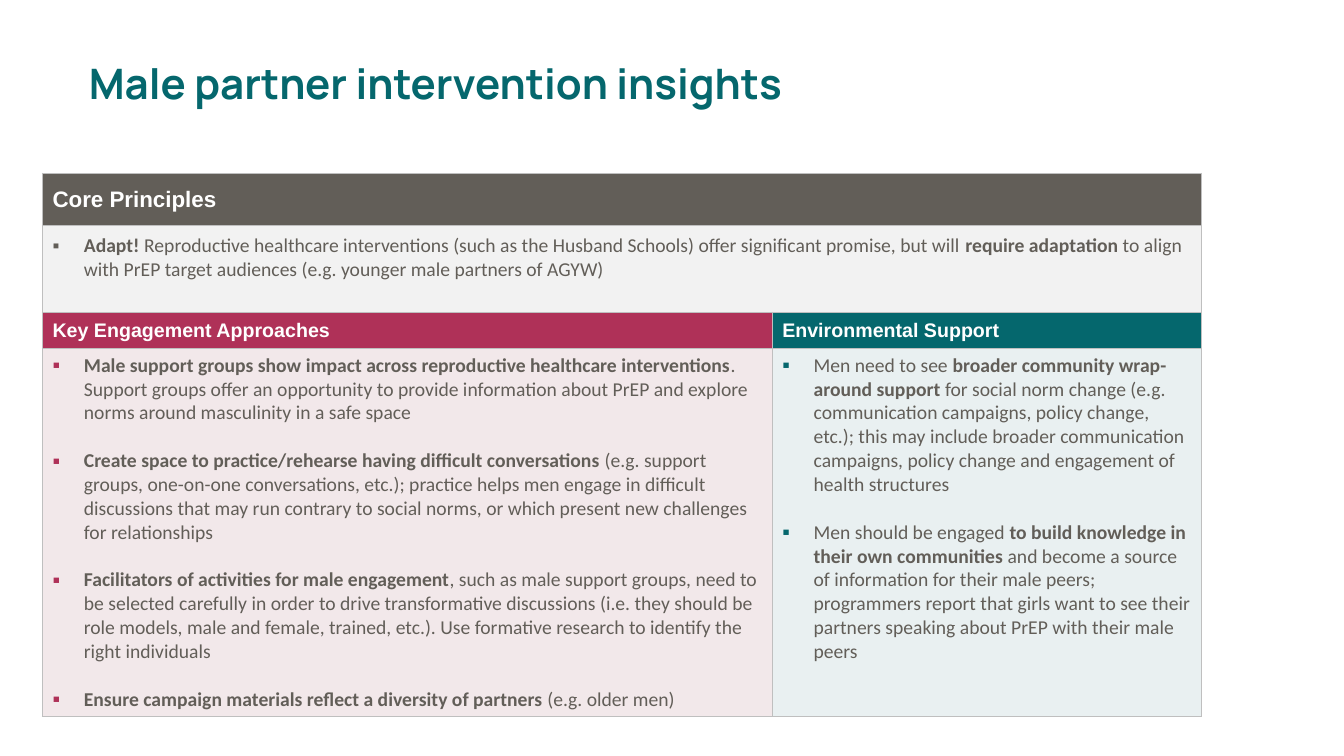
from dataclasses import dataclass

from lxml import etree
from pptx import Presentation
from pptx.dml.color import RGBColor
from pptx.enum.text import MSO_ANCHOR, MSO_AUTO_SIZE, PP_ALIGN
from pptx.oxml.ns import qn
from pptx.table import Table, _Cell
from pptx.text.text import _Paragraph
from pptx.util import Cm, Pt

TOP, MIDDLE = MSO_ANCHOR.TOP, MSO_ANCHOR.MIDDLE
LEFT = PP_ALIGN.LEFT
NO_FIT = MSO_AUTO_SIZE.NONE

WHITE = RGBColor(0xFF, 0xFF, 0xFF)
STONE = RGBColor(0x62, 0x5E, 0x58)
BERRY = RGBColor(0xAF, 0x31, 0x58)
TEAL = RGBColor(0x05, 0x67, 0x6D)
PALE = RGBColor(0xF2, 0xF2, 0xF2)
PINK = RGBColor(0xF2, 0xE8, 0xEA)
MIST = RGBColor(0xE9, 0xF0, 0xF1)
RULE = RGBColor(0xBF, 0xBF, 0xBF)

HANG = Cm(0.79)
GAP = Pt(17)
COLS = [Cm(18.39), Cm(10.82)]
ROWS = [Cm(1.32), Cm(2.18), Cm(0.91), Cm(9.22)]


@dataclass
class Block:
    """A heading cell and the list cell under it; ** marks bold text."""
    row: int
    col: int
    head: str
    size: int
    color: RGBColor
    tint: RGBColor
    items: list[str]
    mark: int = 110
    inset: float = 0.13
    wide: bool = False


BLOCKS = [
    Block(0, 0, "Core Principles", 16, STONE, PALE, [
        "**Adapt! **Reproductive healthcare interventions (such as the Husband "
        "Schools) offer significant promise, but will **require adaptation **to "
        "align with PrEP target audiences (e.g. younger male partners of AGYW)",
    ], mark=100, inset=0.2, wide=True),
    Block(2, 0, "Key Engagement Approaches", 14, BERRY, PINK, [
        "**Male support groups show impact across reproductive healthcare "
        "interventions**. Support groups offer an opportunity to provide "
        "information about PrEP and explore norms around masculinity in a safe space",
        "**Create space to practice/rehearse having difficult conversations **(e.g. "
        "support groups, one-on-one conversations, etc.); practice helps men engage "
        "in difficult discussions that may run contrary to social norms, or which "
        "present new challenges for relationships",
        "**Facilitators of activities for male engagement**, such as male support "
        "groups, need to be selected carefully in order to drive transformative "
        "discussions (i.e. they should be role models, male and female, trained, "
        "etc.). Use formative research to identify the right individuals",
        "**Ensure campaign materials reflect a diversity of partners **(e.g. older men)",
    ]),
    Block(2, 1, "Environmental Support", 14, TEAL, MIST, [
        "Men need to see **broader community wrap-around support **for social norm "
        "change (e.g. communication campaigns, policy change, etc.); this may "
        "include broader communication campaigns, policy change and engagement of "
        "health structures",
        "Men should be engaged **to build knowledge in their own communities **and "
        "become a source of information for their male peers; programmers report "
        "that girls want to see their partners speaking about PrEP with their male "
        "peers",
    ]),
]


def style(para: _Paragraph, name: str, size: int, color: RGBColor) -> None:
    para.font.name = name
    para.font.size = Pt(size)
    para.font.color.rgb = color


def add_mark(para: _Paragraph, color: RGBColor, scale: int) -> None:
    props = para._p.get_or_add_pPr()
    props.set("marL", str(HANG))
    props.set("indent", str(-HANG))
    tint = etree.SubElement(props, qn("a:buClr"))
    etree.SubElement(tint, qn("a:srgbClr"), val=str(color))
    etree.SubElement(props, qn("a:buSzPct"), val=str(scale * 1000))
    etree.SubElement(props, qn("a:buFont"), typeface="Arial")
    etree.SubElement(props, qn("a:buChar"), char="▪")


def add_rules(cell: _Cell) -> None:
    props = cell._tc.get_or_add_tcPr()
    for spot, side in enumerate(("lnL", "lnR", "lnT", "lnB")):
        line = etree.Element(qn(f"a:{side}"), w=str(Pt(1)))
        fill = etree.SubElement(line, qn("a:solidFill"))
        etree.SubElement(fill, qn("a:srgbClr"), val=str(RULE))
        props.insert(spot, line)


def paint(cell: _Cell, color: RGBColor) -> None:
    cell.fill.solid()
    cell.fill.fore_color.rgb = color


def draw_block(table: Table, block: Block) -> None:
    head = table.cell(block.row, block.col)
    body = table.cell(block.row + 1, block.col)
    for cell, color in ((head, block.color), (body, block.tint)):
        if block.wide:
            side = table.cell(block.row + (cell is body), 1)
            paint(side, color)
            cell.merge(side)
        paint(cell, color)

    # Heading
    head.vertical_anchor = MIDDLE
    para = head.text_frame.paragraphs[0]
    para.add_run().text = block.head
    style(para, "Arial", block.size, WHITE)
    para.font.bold = True

    # Bulleted list
    body.vertical_anchor = TOP
    body.margin_top = Cm(block.inset)
    frame = body.text_frame
    for count, item in enumerate(block.items):
        para = frame.add_paragraph() if count else frame.paragraphs[0]
        add_mark(para, block.color, block.mark)
        style(para, "Calibri", 14, STONE)
        if count:
            para.space_before = GAP
        for part, text in enumerate(item.split("**")):
            if text:
                run = para.add_run()
                run.text = text
                run.font.bold = part % 2 == 1


def main() -> None:
    deck = Presentation()
    deck.slide_width, deck.slide_height = Cm(33.87), Cm(19.05)
    slide = deck.slides.add_slide(deck.slide_layouts[5])

    # Title
    title = slide.shapes.title
    title.left, title.top = Cm(0), Cm(0.58)
    title.width, title.height = Cm(29.21), Cm(3.18)
    frame = title.text_frame
    frame.text = "Male partner intervention insights"
    frame.auto_size = NO_FIT
    frame.word_wrap = True
    frame.vertical_anchor = MIDDLE
    frame.margin_left = Cm(2.24)
    para = frame.paragraphs[0]
    para.alignment = LEFT
    para.line_spacing = 0.9
    style(para, "Manrope", 30, TEAL)
    para.font.bold = True

    # Table
    table = slide.shapes.add_table(
        len(ROWS), len(COLS), Cm(1.07), Cm(4.37), sum(COLS), sum(ROWS)).table
    table.first_row = table.horz_banding = False
    for col, width in zip(table.columns, COLS):
        col.width = width
    for row, height in zip(table.rows, ROWS):
        row.height = height
    for block in BLOCKS:
        draw_block(table, block)
    for cell in table.iter_cells():
        add_rules(cell)

    deck.save("out.pptx")


if __name__ == "__main__":
    main()
